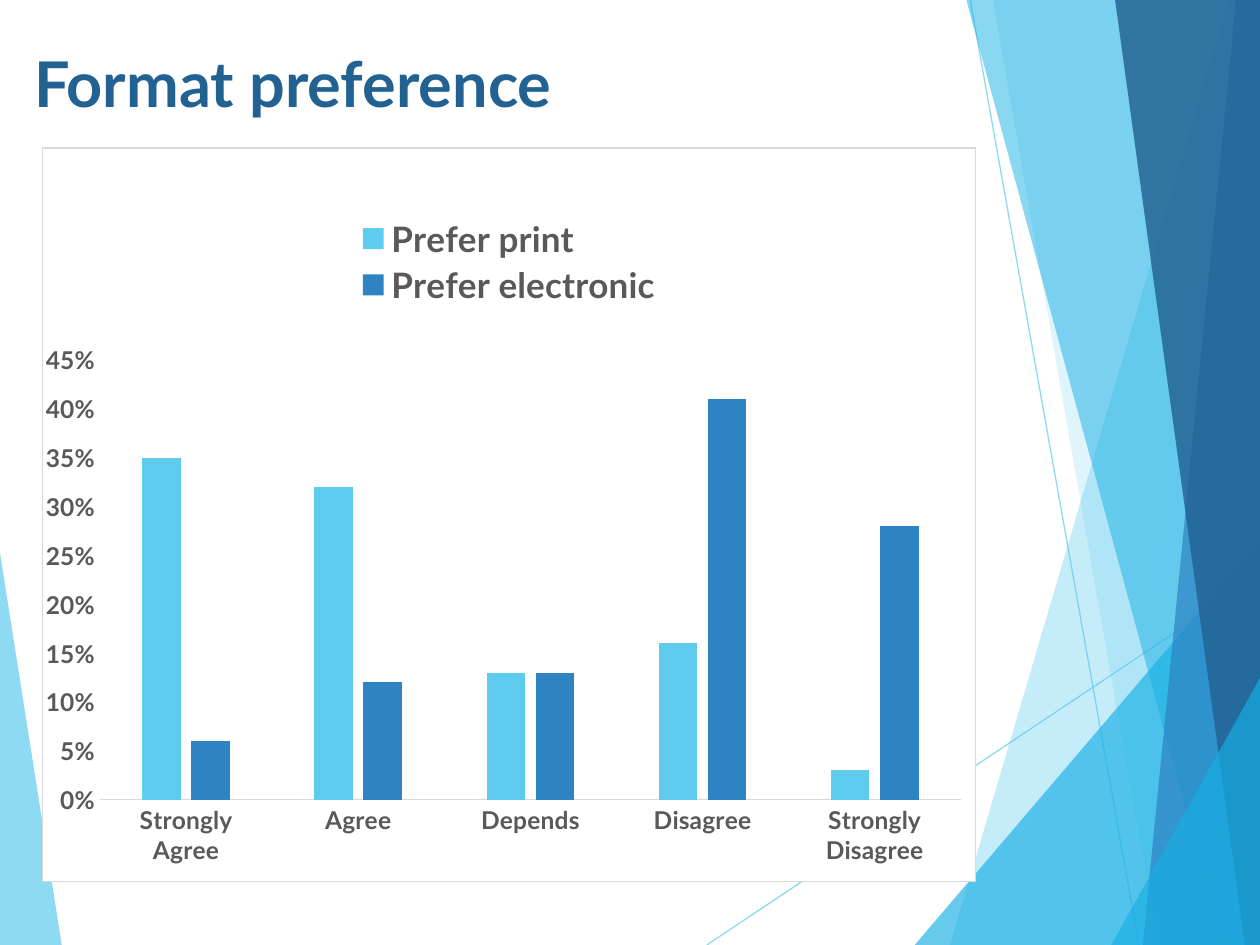
from lxml.etree import SubElement
from pptx import Presentation
from pptx.chart.data import CategoryChartData
from pptx.dml.color import RGBColor
from pptx.enum.chart import XL_CHART_TYPE as ChartType, XL_LEGEND_POSITION as LegendPosition
from pptx.enum.chart import XL_TICK_MARK as TickMark
from pptx.enum.shapes import MSO_CONNECTOR as Connector
from pptx.enum.text import MSO_ANCHOR as Anchor, MSO_AUTO_SIZE as AutoSize, PP_ALIGN as Align
from pptx.oxml import parse_xml
from pptx.oxml.ns import nsdecls, qn
from pptx.util import Pt

PX = 9144
WIDTH, HEIGHT = 1000, 750
SKY = RGBColor(0x5F, 0xCB, 0xEF)
CYAN = RGBColor(0x17, 0xB0, 0xE4)
BLUE = RGBColor(0x2E, 0x83, 0xC3)
NAVY = RGBColor(0x22, 0x62, 0x92)
GRAY = RGBColor(0x59, 0x59, 0x59)
PALE = RGBColor(0xD9, 0xD9, 0xD9)
WHITE = RGBColor(0xFF, 0xFF, 0xFF)

LINES = [((561, 750), (1000, 457)), ((770, 0), (904, 750))]
FACETS = [
    ([(0, 439), (49, 750), (0, 750)], SKY, 70),
    ([(975, 0), (754, 750), (1000, 750), (1000, 0)], SKY, 36),
    ([(788, 0), (919, 750), (1000, 750), (1000, 0)], SKY, 20),
    ([(726, 750), (1000, 429), (1000, 750)], CYAN, 66),
    ([(767, 0), (970, 750), (1000, 750), (1000, 0)], CYAN, 50),
    ([(981, 0), (907, 750), (1000, 750), (1000, 0)], BLUE, 70),
    ([(885, 0), (988, 750), (1000, 750), (1000, 0)], NAVY, 82),
    ([(882, 750), (1000, 538), (1000, 750)], CYAN, 66),
]
CATEGORIES = ["Strongly Agree", "Agree", "Depends", "Disagree", "Strongly Disagree"]
SERIES = [
    ("Prefer print", SKY, [0.35, 0.32, 0.13, 0.16, 0.03]),
    ("Prefer electronic", BLUE, [0.06, 0.12, 0.13, 0.41, 0.28]),
]


def format_font(font, size, color, bold=True, name="Lato"):
    font.name = name
    font.size = Pt(size)
    font.bold = bold
    font.color.rgb = color


def write_text(frame, text, align=Align.LEFT, **font_format):
    paragraph = frame.paragraphs[0]
    paragraph.alignment = align
    run = paragraph.add_run()
    run.text = text
    format_font(run.font, **font_format)


def set_opacity(color_parent, percent):
    color = next(color_parent.iter(qn("a:srgbClr")))
    SubElement(color, qn("a:alpha")).set("val", str(percent * 1000))


def set_layout(parent, index, box, inner=False):
    for layout in parent.findall(qn("c:layout")):
        parent.remove(layout)
    target = '<c:layoutTarget val="inner"/>' if inner else ""
    modes = "".join(f'<c:{side}Mode val="edge"/>' for side in "xy")
    sizes = "".join(f'<c:{side} val="{value}"/>' for side, value in zip("xywh", box))
    parent.insert(index, parse_xml(
        f'<c:layout {nsdecls("c")}><c:manualLayout>{target}{modes}{sizes}'
        "</c:manualLayout></c:layout>"))


class SlideBuilder:
    def __init__(self, presentation):
        self.slide = presentation.slides.add_slide(presentation.slide_layouts[5])
        self.shapes = self.slide.shapes

    def facet(self, points, color, opacity):
        builder = self.shapes.build_freeform(*points[0], scale=PX)
        builder.add_line_segments(points[1:], close=True)
        shape = builder.convert_to_shape()
        shape.shadow.inherit = False
        shape.fill.solid()
        shape.fill.fore_color.rgb = color
        shape.line.fill.background()
        set_opacity(shape.element.spPr, opacity)

    def line(self, start, end, color, opacity):
        ends = [value * PX for value in (*start, *end)]
        connector = self.shapes.add_connector(Connector.STRAIGHT, *ends)
        connector.line.color.rgb = color
        connector.line.width = Pt(0.75)
        set_opacity(connector.element.spPr, opacity)
        SubElement(connector.element.spPr, qn("a:effectLst"))

    def title(self, text, left, top, width, height):
        title = self.shapes.title
        title.left, title.top = left * PX, top * PX
        title.width, title.height = width * PX, height * PX
        frame = title.text_frame
        frame.word_wrap = True
        frame.auto_size = AutoSize.NONE
        frame.vertical_anchor = Anchor.TOP
        write_text(frame, text, size=36, color=NAVY)
        self.shapes.element.append(title.element)

    def axis(self, axis):
        axis.has_major_gridlines = False
        axis.major_tick_mark = axis.minor_tick_mark = TickMark.NONE
        format_font(axis.tick_labels.font, 14, GRAY)

    def column_chart(self, left, top, width, height):
        data = CategoryChartData(number_format="0%")
        data.categories = CATEGORIES
        for name, _, values in SERIES:
            data.add_series(name, values)
        chart = self.shapes.add_chart(
            ChartType.COLUMN_CLUSTERED, left * PX, top * PX, width * PX, height * PX, data).chart
        chart.has_title = False
        format_font(chart.font, 10, GRAY, bold=False)

        plot = chart.plots[0]
        plot.gap_width, plot.overlap = 219, -27
        plot.vary_by_categories = False
        for series, (_, color, _) in zip(plot.series, SERIES):
            series.invert_if_negative = False
            series.format.fill.solid()
            series.format.fill.fore_color.rgb = color

        self.axis(chart.category_axis)
        chart.category_axis.format.line.color.rgb = PALE
        chart.category_axis.format.line.width = Pt(0.75)
        value_axis = chart.value_axis
        self.axis(value_axis)
        value_axis.format.line.fill.background()
        value_axis.minimum_scale, value_axis.maximum_scale = 0, 0.45
        value_axis.major_unit = 0.05
        value_axis.tick_labels.number_format = "0%"
        value_axis.tick_labels.number_format_is_linked = False

        chart.has_legend = True
        legend = chart.legend
        legend.position = LegendPosition.TOP
        legend.include_in_layout = False
        format_font(legend.font, 20, GRAY)

        root = chart.element
        set_layout(next(root.iter(qn("c:legend"))), 1, (0.33, 0.09, 0.34, 0.13))
        set_layout(next(root.iter(qn("c:plotArea"))), 0, (0.062, 0.289, 0.922, 0.6), inner=True)
        root.find(qn("c:chart")).addnext(parse_xml(
            f'<c:spPr {nsdecls("c", "a")}>'
            f'<a:solidFill><a:srgbClr val="{WHITE}"/></a:solidFill>'
            f'<a:ln w="{Pt(0.75)}"><a:solidFill><a:srgbClr val="{PALE}"/></a:solidFill></a:ln>'
            "</c:spPr>"))


def main():
    presentation = Presentation()
    presentation.slide_width, presentation.slide_height = WIDTH * PX, HEIGHT * PX
    builder = SlideBuilder(presentation)
    builder.facet(*FACETS[0])
    for start, end in LINES:
        builder.line(start, end, SKY, 70)
    for facet in FACETS[1:]:
        builder.facet(*facet)
    builder.title("Format preference", 17, 30, 967, 125)
    builder.column_chart(33, 117, 742, 583)
    presentation.save("out.pptx")


if __name__ == "__main__":
    main()
